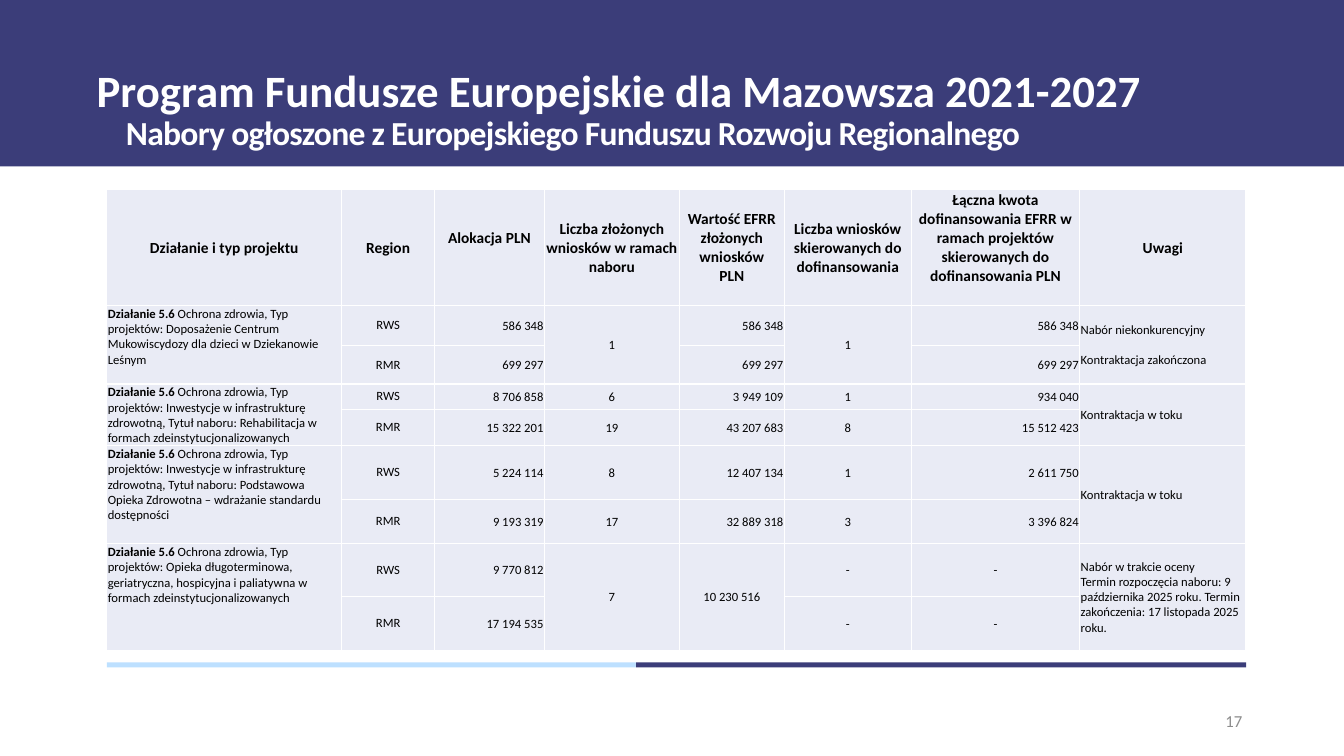
from pptx import Presentation
from pptx.dml.color import RGBColor
from pptx.enum.shapes import MSO_SHAPE
from pptx.enum.text import MSO_ANCHOR, PP_ALIGN
from pptx.oxml import parse_xml
from pptx.oxml.ns import nsdecls
from pptx.util import Inches, Pt

RECTANGLE = MSO_SHAPE.RECTANGLE
TOP, MIDDLE = MSO_ANCHOR.TOP, MSO_ANCHOR.MIDDLE
LEFT, CENTER, RIGHT = PP_ALIGN.LEFT, PP_ALIGN.CENTER, PP_ALIGN.RIGHT

NAVY = RGBColor(0x3B, 0x3D, 0x79)
SKY = RGBColor(0xBD, 0xE0, 0xFF)
PALE = RGBColor(0xE9, 0xEB, 0xF5)
GREY = RGBColor(0x8C, 0x8C, 0x8C)
BLACK = RGBColor(0, 0, 0)
WHITE = RGBColor(0xFF, 0xFF, 0xFF)
FONT = "Calibri"

# Grid in inches: the table columns and rows set the content area.
SLIDE_W, SLIDE_H = 13.33, 7.5
BANNER_H = 1.65
GRID_LEFT, GRID_TOP = 1.06, 1.88
COLUMNS = [2.33, 0.92, 1.09, 1.34, 1.04, 1.26, 1.67, 1.65]
ROWS = [1.15, 0.4, 0.38, 0.25, 0.36, 0.53, 0.44, 0.53, 0.53]
GRID_W = sum(COLUMNS)
RULE_TOP, RULE_H, SKY_RULE_W = 6.57, 0.05, 5.25
TEXT_W = 11.5

HEADERS = [
    "Działanie i typ projektu", "Region", "Alokacja PLN",
    "Liczba złożonych wniosków w ramach naboru",
    "Wartość EFRR złożonych wniosków\nPLN",
    "Liczba wniosków skierowanych do dofinansowania",
    "Łączna kwota dofinansowania EFRR w ramach projektów "
    "skierowanych do dofinansowania PLN",
    "Uwagi",
]
RAISED_HEADERS = (2, 6)
AMOUNT_COLUMNS = (2, 4, 6)
REGIONS = ("RWS", "RMR")
ACTION = "Działanie 5.6"

# Project type, figures for each region (None joins the cell above), remarks
CALLS = [
    ("Doposażenie Centrum Mukowiscydozy dla dzieci w Dziekanowie Leśnym",
     [("586 348", "1", "586 348", "1", "586 348"),
      ("699 297", None, "699 297", None, "699 297")],
     ["Nabór niekonkurencyjny", "Kontraktacja zakończona"], 11),
    ("Inwestycje w infrastrukturę zdrowotną, Tytuł naboru: Rehabilitacja "
     "w formach zdeinstytucjonalizowanych",
     [("8 706 858", "6", "3 949 109", "1", "934 040"),
      ("15 322 201", "19", "43 207 683", "8", "15 512 423")],
     ["Kontraktacja w toku"], 0),
    ("Inwestycje w infrastrukturę zdrowotną, Tytuł naboru: Podstawowa "
     "Opieka Zdrowotna – wdrażanie standardu dostępności",
     [("5 224 114", "8", "12 407 134", "1", "2 611 750"),
      ("9 193 319", "17", "32 889 318", "3", "3 396 824")],
     ["Kontraktacja w toku"], 0),
    ("Opieka długoterminowa, geriatryczna, hospicyjna i paliatywna w formach "
     "zdeinstytucjonalizowanych",
     [("9 770 812", "7", "10 230 516", "-", "-"),
      ("17 194 535", None, None, "-", "-")],
     ["Nabór w trakcie oceny",
      "Termin rozpoczęcia naboru: 9 października 2025 roku. "
      "Termin zakończenia: 17 listopada 2025 roku."], 0),
]


def add_run(paragraph, text, size, color=BLACK, bold=False):
    """Add text in one style, turning each newline into a line break."""
    for index, line in enumerate(text.split("\n")):
        if index:
            paragraph.add_line_break()
        run = paragraph.add_run()
        run.text = line
        run.font.name, run.font.size = FONT, Pt(size)
        run.font.bold = bold
        run.font.color.rgb = color
    return run


def add_bar(slide, left, top, width, height, color):
    bar = slide.shapes.add_shape(
        RECTANGLE, Inches(left), Inches(top), Inches(width), Inches(height))
    bar.shadow.inherit = False
    bar.fill.solid()
    bar.fill.fore_color.rgb = color
    bar.line.fill.background()


def add_label(slide, box, text, size, color, bold=False, anchor=MIDDLE, align=LEFT):
    frame = slide.shapes.add_textbox(*map(Inches, box)).text_frame
    frame.word_wrap = True
    frame.vertical_anchor = anchor
    paragraph = frame.paragraphs[0]
    paragraph.alignment = align
    return paragraph, add_run(paragraph, text, size, color, bold)


def style_cell(cell):
    for side in ("lnL", "lnR", "lnT", "lnB"):
        cell._tc.get_or_add_tcPr().append(parse_xml(
            f'<a:{side} {nsdecls("a")} w="12700"><a:solidFill>'
            f'<a:srgbClr val="{WHITE}"/></a:solidFill></a:{side}>'))
    cell.fill.solid()
    cell.fill.fore_color.rgb = PALE
    cell.margin_left = cell.margin_right = cell.margin_top = Inches(0.01)
    cell.margin_bottom = 0
    cell.vertical_anchor = MIDDLE


def write_cell(cell, text, align, size=9, bold=False):
    paragraph = cell.text_frame.paragraphs[0]
    paragraph.alignment = align
    add_run(paragraph, text, size, bold=bold)


def write_call(table, top_row, project, figures, remarks, remark_gap):
    """Fill the two rows of one call for proposals."""
    last_column = len(COLUMNS) - 1
    action, remark = table.cell(top_row, 0), table.cell(top_row, last_column)
    for joined, column in ((action, 0), (remark, last_column)):
        joined.merge(table.cell(top_row + 1, column))

    action.vertical_anchor = TOP
    write_cell(action, ACTION, LEFT, bold=True)
    add_run(action.text_frame.paragraphs[0],
            f" Ochrona zdrowia, Typ projektów: {project}", 9)

    write_cell(remark, remarks[0], LEFT)
    for line in remarks[1:]:
        paragraph = remark.text_frame.add_paragraph()
        paragraph.space_before = Pt(remark_gap)
        add_run(paragraph, line, 9)

    for row, (region, values) in enumerate(zip(REGIONS, figures), top_row):
        region_cell = table.cell(row, 1)
        region_cell.margin_left = region_cell.margin_right = region_cell.margin_top = 0
        write_cell(region_cell, region, CENTER)
        for column, value in enumerate(values, 2):
            cell = table.cell(row, column)
            if value is None:
                table.cell(top_row, column).merge(cell)
                table.cell(top_row, column).text_frame.paragraphs[0].alignment = CENTER
            else:
                is_amount = column in AMOUNT_COLUMNS and value != "-"
                write_cell(cell, value, RIGHT if is_amount else CENTER)


def add_calls_table(slide):
    table = slide.shapes.add_table(
        len(ROWS), len(COLUMNS), Inches(GRID_LEFT), Inches(GRID_TOP),
        Inches(GRID_W), Inches(sum(ROWS))).table
    table.first_row = table.horz_banding = False
    for column, width in zip(table.columns, COLUMNS):
        column.width = Inches(width)
    for row, height in zip(table.rows, ROWS):
        row.height = Inches(height)
    for cell in table.iter_cells():
        style_cell(cell)
    for column, header in enumerate(HEADERS):
        cell = table.cell(0, column)
        if column in RAISED_HEADERS:
            cell.margin_bottom = Inches(0.19)
        write_cell(cell, header, CENTER, 11, True)
    for index, call in enumerate(CALLS):
        write_call(table, 1 + index * len(REGIONS), *call)


def main():
    deck = Presentation()
    deck.slide_width, deck.slide_height = Inches(SLIDE_W), Inches(SLIDE_H)
    slide = deck.slides.add_slide(deck.slide_layouts[6])

    add_bar(slide, 0, 0, SLIDE_W, BANNER_H, NAVY)
    title, _ = add_label(slide, (0.86, 0.2, TEXT_W, BANNER_H - 0.2),
                         "Program Fundusze Europejskie dla Mazowsza 2021-2027",
                         32, WHITE, True)
    title.line_spacing = 0.9
    _, subtitle = add_label(
        slide, (1.15, 1.06, TEXT_W, 0.63),
        "Nabory ogłoszone z Europejskiego Funduszu Rozwoju Regionalnego",
        24, WHITE, True, TOP)
    subtitle.font._element.set("spc", "-50")

    add_bar(slide, GRID_LEFT, RULE_TOP, SKY_RULE_W, RULE_H, SKY)
    add_bar(slide, GRID_LEFT + SKY_RULE_W, RULE_TOP, GRID_W - SKY_RULE_W, RULE_H, NAVY)
    add_calls_table(slide)
    add_label(slide, (9.42, 6.95, 3, 0.4), "17", 12, GREY, align=RIGHT)
    deck.save("out.pptx")


if __name__ == "__main__":
    main()
